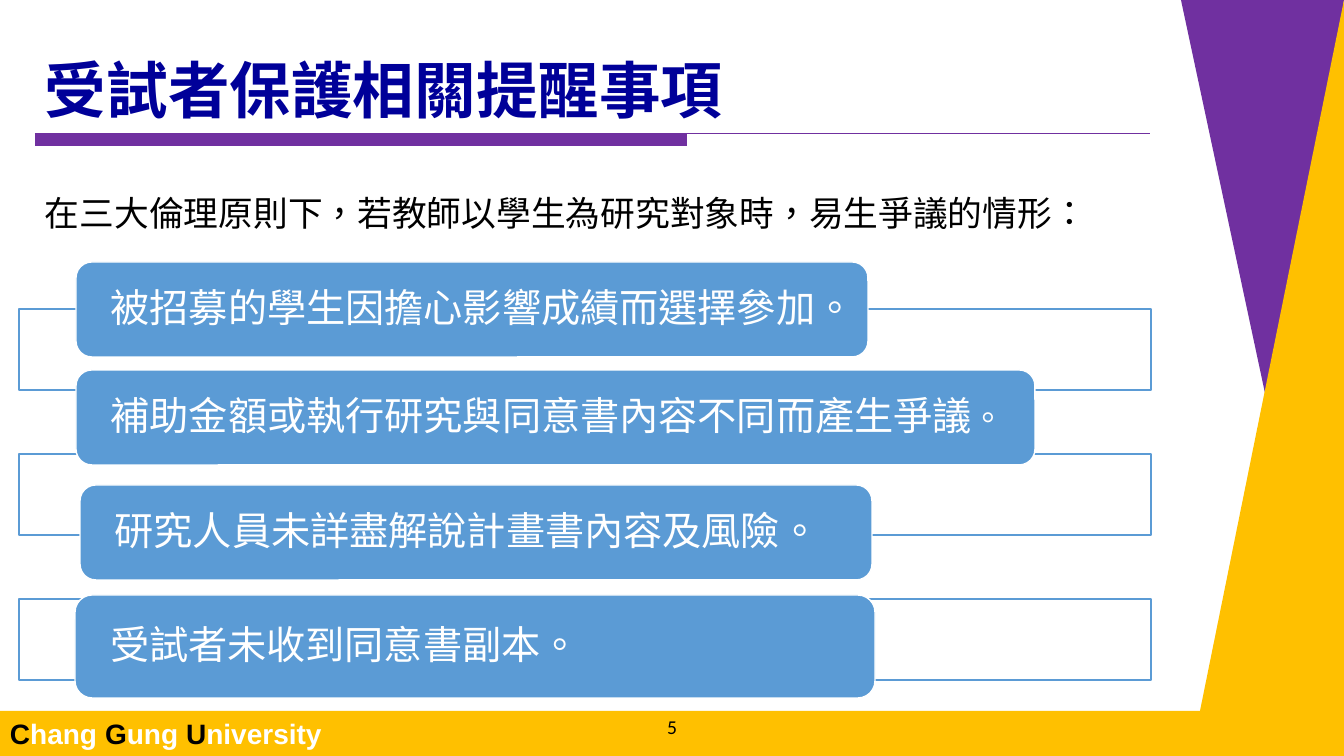
"""Build the slide on reminders for protecting research participants."""
from dataclasses import dataclass
from typing import Optional

from lxml.etree import SubElement
from pptx import Presentation
from pptx.dml.color import RGBColor
from pptx.enum.shapes import MSO_CONNECTOR, MSO_SHAPE
from pptx.enum.text import MSO_ANCHOR, PP_ALIGN
from pptx.oxml.ns import qn
from pptx.util import Emu, Pt

EMU_PER_PX = 914400 / 100.8
COLOURS = {
    "purple": "7030A0", "gold": "FFC000", "blue": "5B9BD5",
    "navy": "000099", "black": "000000", "white": "FFFFFF",
}
CJK_FONT = "Noto Sans CJK SC"


@dataclass(frozen=True)
class Area:
    left: int
    top: int
    width: int
    height: int

    def emu(self) -> list[Emu]:
        return [px(value) for value in (self.left, self.top, self.width, self.height)]


@dataclass(frozen=True)
class Span:
    text: str
    size: float
    colour: str = "white"
    font: str = "Calibri"
    bold: bool = False


@dataclass(frozen=True)
class Label:
    area: Area
    span: Span
    anchor: MSO_ANCHOR
    spacing: float = 1.0
    align: PP_ALIGN = PP_ALIGN.LEFT


@dataclass(frozen=True)
class Reminder:
    area: Area
    spans: tuple[Span, ...]


@dataclass(frozen=True)
class Wedge:
    points: tuple[tuple[int, int], ...]
    colour: str


WEDGES = (
    Wedge(((1344, 0), (1181, 0), (1277, 449)), "purple"),
    Wedge(((1344, 0), (1200, 711), (1344, 711)), "gold"),
)
LABELS = (
    Label(Area(35, 40, 1115, 92), Span("受試者保護相關提醒事項", 44, "navy", CJK_FONT, True),
          MSO_ANCHOR.BOTTOM, 0.9),
    Label(Area(35, 195, 1115, 60),
          Span("在三大倫理原則下，若教師以學生為研究對象時，易生爭議的情形：", 24.8, "black", CJK_FONT),
          MSO_ANCHOR.TOP, 0.8),
    Label(Area(533, 713, 278, 28), Span("5", 14, "black"), MSO_ANCHOR.MIDDLE,
          align=PP_ALIGN.CENTER),
)
REMINDERS = (
    Reminder(Area(76, 262, 792, 95), (Span("被招募的學生因擔心影響成績而選擇參加。", 28),)),
    Reminder(Area(76, 370, 959, 95),
             (Span("補助金額或執行研究與同意書內容不同而產生爭議", 28), Span("。", 24))),
    Reminder(Area(80, 485, 792, 95), (Span("研究人員未詳盡解說計畫書內容及風險。", 28),)),
    Reminder(Area(75, 595, 800, 103), (Span("受試者未收到同意書副本。", 28),)),
)
FRAME_COUNT = 3
FRAME_STEP = 145
UNIVERSITY = ("C", "hang ", "G", "ung ", "U", "niversity")


def px(value: float) -> Emu:
    return Emu(round(value * EMU_PER_PX))


def rgb(name: str) -> RGBColor:
    return RGBColor.from_string(COLOURS[name])


def paint(shape, fill: str, line: Optional[str] = None) -> None:
    shape.shadow.inherit = False
    shape.fill.solid()
    shape.fill.fore_color.rgb = rgb(fill)
    if line:
        shape.line.color.rgb = rgb(line)
        shape.line.width = Pt(1)
    else:
        shape.line.fill.background()


def add_block(page, kind: MSO_SHAPE, area: Area, fill: str, line: Optional[str] = None):
    shape = page.shapes.add_shape(kind, *area.emu())
    paint(shape, fill, line)
    return shape


def write(frame, spans: tuple[Span, ...], anchor: MSO_ANCHOR,
          spacing: float = 1.0, align: PP_ALIGN = PP_ALIGN.LEFT) -> None:
    frame.word_wrap = True
    frame.vertical_anchor = anchor
    para = frame.paragraphs[0]
    para.alignment = align
    para.line_spacing = spacing
    for span in spans:
        run = para.add_run()
        run.text = span.text
        run.font.name = span.font
        run.font.size = Pt(span.size)
        run.font.bold = span.bold
        run.font.color.rgb = rgb(span.colour)
        properties = run._r.get_or_add_rPr()
        properties.set("lang", "zh-TW")
        latin = properties.find(qn("a:latin"))
        east_asian = SubElement(properties, qn("a:ea"), typeface=CJK_FONT)
        latin.addnext(east_asian)


def add_wedge(page, wedge: Wedge) -> None:
    builder = page.shapes.build_freeform(*wedge.points[0], scale=EMU_PER_PX)
    builder.add_line_segments(wedge.points[1:], close=True)
    paint(builder.convert_to_shape(), wedge.colour)


def add_footer(page) -> None:
    footer = add_block(page, MSO_SHAPE.RECTANGLE, Area(0, 711, 1344, 45), "gold")
    spans = tuple(
        Span(part, 20, "white" if index % 2 else "black", "Arial", True)
        for index, part in enumerate(UNIVERSITY)
    )
    write(footer.text_frame, spans, MSO_ANCHOR.MIDDLE)


def add_title_rule(page) -> None:
    add_block(page, MSO_SHAPE.RECTANGLE, Area(35, 134, 652, 12), "purple")
    rule = page.shapes.add_connector(MSO_CONNECTOR.STRAIGHT, px(35), px(134), px(1150), px(134))
    rule.line.color.rgb = rgb("purple")
    rule.line.width = Pt(0.75)
    SubElement(rule._element.spPr, qn("a:effectLst"))


def add_label(page, label: Label) -> None:
    box = page.shapes.add_textbox(*label.area.emu())
    write(box.text_frame, (label.span,), label.anchor, label.spacing, label.align)


def add_frame(page, index: int) -> None:
    area = Area(19, 309 + index * FRAME_STEP, 1132, 81)
    frame = add_block(page, MSO_SHAPE.RECTANGLE, area, "white", "blue")
    colour = frame._element.spPr.find(qn("a:solidFill")).find(qn("a:srgbClr"))
    SubElement(colour, qn("a:alpha"), val="90000")


def add_reminder(page, reminder: Reminder) -> None:
    bar = add_block(page, MSO_SHAPE.ROUNDED_RECTANGLE, reminder.area, "blue", "white")
    frame = bar.text_frame
    frame.margin_left, frame.margin_right = px(30), px(4)
    frame.margin_top = frame.margin_bottom = 0
    write(frame, reminder.spans, MSO_ANCHOR.MIDDLE, 0.9)


def main() -> None:
    deck = Presentation()
    deck.slide_width, deck.slide_height = px(1344), px(756)
    page = deck.slides.add_slide(deck.slide_layouts[6])
    for wedge in WEDGES:
        add_wedge(page, wedge)
    add_footer(page)
    add_title_rule(page)
    for label in LABELS:
        add_label(page, label)
    for index, reminder in enumerate(REMINDERS):
        if index < FRAME_COUNT:
            add_frame(page, index)
        add_reminder(page, reminder)
    deck.save("out.pptx")


if __name__ == "__main__":
    main()
